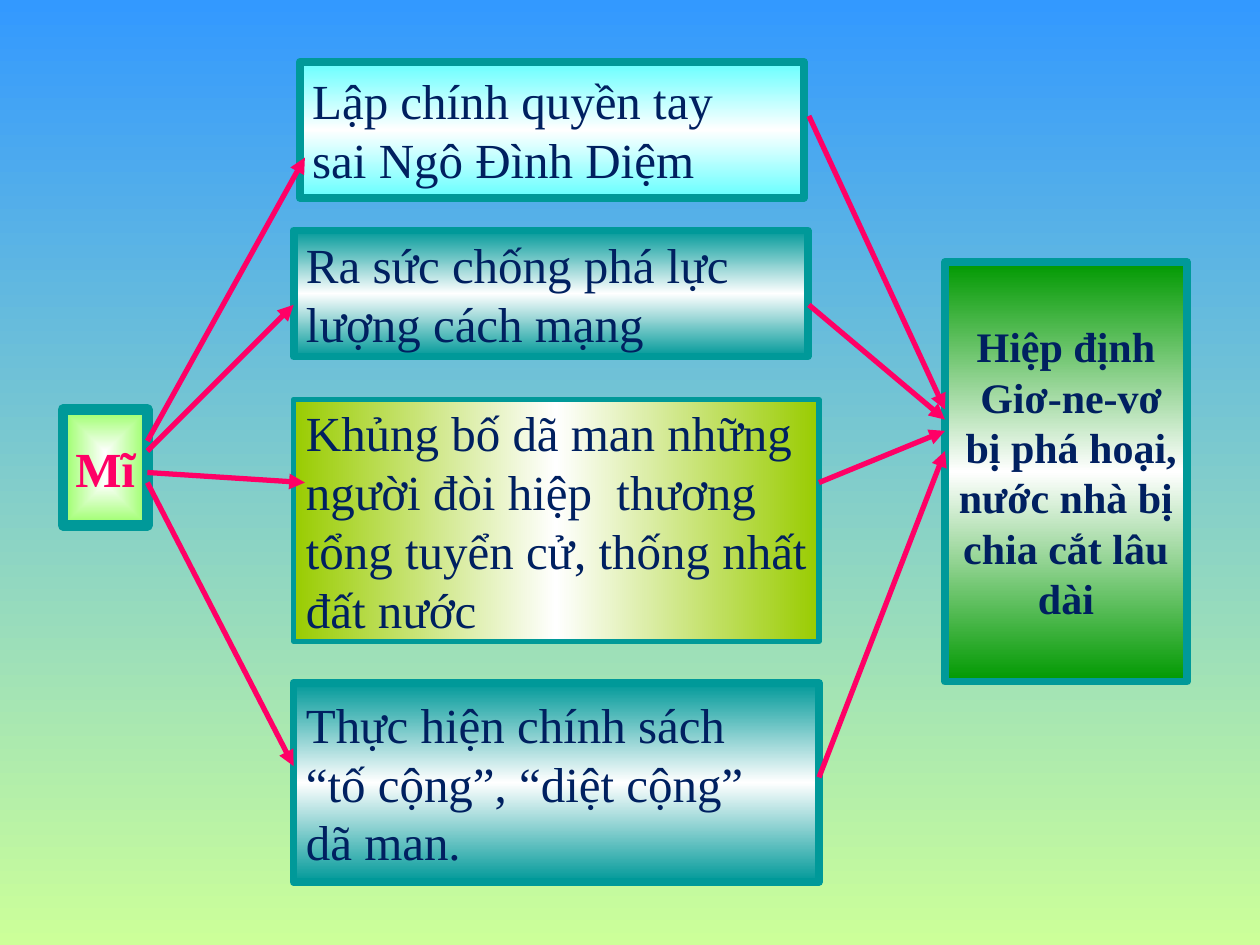
from copy import deepcopy

from pptx import Presentation
from pptx.dml.color import RGBColor
from pptx.enum.shapes import MSO_CONNECTOR as Connector, MSO_SHAPE as Shape
from pptx.enum.text import MSO_ANCHOR as Anchor, PP_ALIGN as Align
from pptx.oxml.ns import qn
from pptx.oxml.xmlchemy import OxmlElement
from pptx.util import Inches, Pt

SKY = RGBColor(0x33, 0x99, 0xFF)
LIME = RGBColor(0xCC, 0xFF, 0x99)
WHITE = RGBColor(0xFF, 0xFF, 0xFF)
MINT = RGBColor(0x99, 0xFF, 0x66)
OLIVE = RGBColor(0x99, 0xCC, 0x00)
TEAL = RGBColor(0x00, 0x99, 0x99)
GREEN = RGBColor(0x00, 0x99, 0x00)
AQUA = RGBColor(0x66, 0xFF, 0xFF)
NAVY = RGBColor(0x00, 0x20, 0x60)
PINK = RGBColor(0xFF, 0x00, 0x66)


class DiagramSlide:
    """Draws gradient boxes and arrows in one style on the current slide."""

    font_name = "Times New Roman"

    def __init__(self, slide):
        self.slide = slide

    def gradient(self, fill, owner, colors, angle=270):
        fill.gradient()
        fill.gradient_angle = angle
        stops = owner.find(".//" + qn("a:gsLst"))
        if len(colors) == 3:
            stops.insert(1, deepcopy(stops[0]))
        for index, (stop, color) in enumerate(zip(fill.gradient_stops, colors)):
            stop.position = index / (len(colors) - 1)
            stop.color.rgb = color

    def center_gradient(self, shape):
        linear = shape.element.spPr.find(".//" + qn("a:lin"))
        radial = OxmlElement("a:path")
        radial.set("path", "shape")
        focus = OxmlElement("a:fillToRect")
        for side in "ltrb":
            focus.set(side, "50000")
        radial.append(focus)
        linear.getparent().replace(linear, radial)

    def background(self, *colors):
        self.gradient(self.slide.background.fill, self.slide.element, colors)

    def box(self, bounds, lines, colors, angle=270, border=4.5, size=28,
            color=NAVY, bold=False, align=Align.JUSTIFY):
        shape = self.slide.shapes.add_shape(Shape.RECTANGLE, *map(Inches, bounds))
        shape.shadow.inherit = False
        self.gradient(shape.fill, shape.element.spPr, colors, angle)
        shape.line.color.rgb = TEAL
        shape.line.width = Pt(border)
        frame = shape.text_frame
        frame.word_wrap = False
        frame.vertical_anchor = Anchor.MIDDLE
        for index, line in enumerate(lines):
            paragraph = frame.add_paragraph() if index else frame.paragraphs[0]
            paragraph.alignment = align
            run = paragraph.add_run()
            run.text = line
            run.font.name = self.font_name
            run.font.size = Pt(size)
            run.font.bold = bold
            run.font.color.rgb = color
        return shape

    def arrow(self, start, end):
        connector = self.slide.shapes.add_connector(
            Connector.STRAIGHT, *map(Inches, (*start, *end)))
        connector.line.color.rgb = PINK
        connector.line.width = Pt(3)
        head = OxmlElement("a:tailEnd")
        head.set("type", "triangle")
        connector.line._get_or_add_ln().append(head)
        connector.element.spPr.append(OxmlElement("a:effectLst"))


def main():
    presentation = Presentation()
    presentation.slide_width = Inches(10)
    presentation.slide_height = Inches(7.5)
    diagram = DiagramSlide(presentation.slides.add_slide(presentation.slide_layouts[6]))
    diagram.background(SKY, LIME)

    cause = diagram.box((0.5, 3.25, 0.67, 0.92), ["Mĩ"], (WHITE, MINT),
                        border=6, color=PINK, bold=True, align=Align.CENTER)
    diagram.center_gradient(cause)
    diagram.box((2.33, 3.17, 4.17, 1.92),
                ["Khủng bố dã man những ", "người đòi hiệp  thương",
                 "tổng tuyển cử, thống nhất", "đất nước  "],
                (OLIVE, WHITE, OLIVE), angle=0, border=3)
    diagram.box((2.33, 5.42, 4.17, 1.58),
                ["Thực hiện chính sách ", "“tố cộng”, “diệt cộng”", "dã man."],
                (TEAL, WHITE, TEAL))
    diagram.box((7.5, 2.08, 1.92, 3.33),
                ["Hiệp định", " Giơ-ne-vơ", "  bị phá hoại, ", "nước nhà bị",
                 " chia cắt lâu ", "dài"],
                (GREEN, WHITE, GREEN), size=24, bold=True, align=Align.CENTER)
    diagram.box((2.38, 0.49, 4, 1.08),
                ["Lập chính quyền tay ", "sai Ngô Đình Diệm"], (AQUA, WHITE, AQUA))
    diagram.box((2.33, 1.83, 4.08, 1),
                ["Ra sức chống phá lực ", "lượng cách mạng"], (TEAL, WHITE, TEAL))

    cause_right, result_left = 1.17, 7.5
    for start_y, end in ((3.5, (2.42, 1.25)), (3.58, (2.33, 2.42)),
                         (3.83, (2.33, 6.08)), (3.75, (2.42, 3.83))):
        diagram.arrow((cause_right, start_y), end)
    for start, end_y in (((6.5, 6.17), 3.58), ((6.5, 3.83), 3.42),
                         ((6.42, 2.42), 3.33), ((6.42, 0.92), 3.25)):
        diagram.arrow(start, (result_left, end_y))

    presentation.save("out.pptx")


if __name__ == "__main__":
    main()
